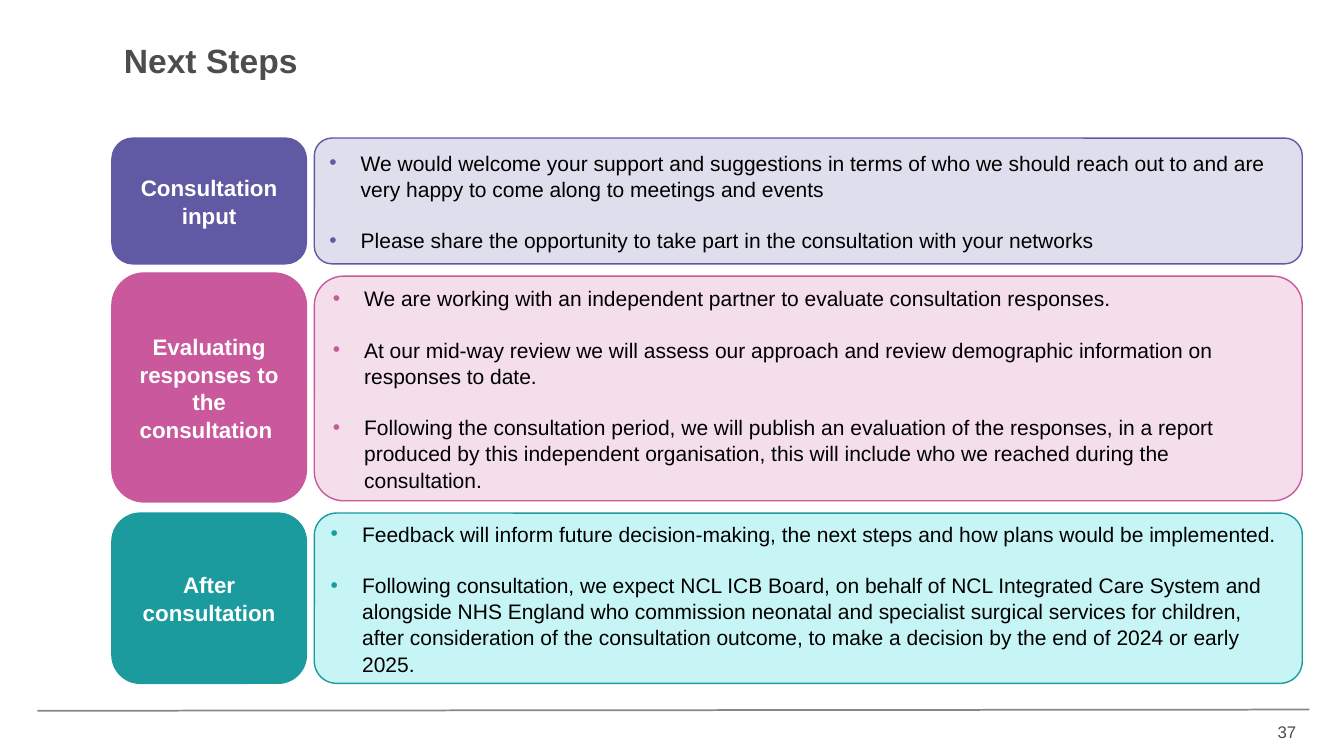
import pptx
import pptx.dml.color
import pptx.enum.shapes
import pptx.enum.text
import pptx.oxml.ns
import pptx.util
from lxml import etree

Cm = pptx.util.Cm
Pt = pptx.util.Pt
RGBColor = pptx.dml.color.RGBColor
PP_ALIGN = pptx.enum.text.PP_ALIGN
MSO_ANCHOR = pptx.enum.text.MSO_ANCHOR
qn = pptx.oxml.ns.qn

FONT = "Arial"
WHITE = RGBColor(0xFF, 0xFF, 0xFF)
BLACK = RGBColor(0, 0, 0)
DARK_GREY = RGBColor(0x4D, 0x4D, 0x4C)
RULE_GREY = RGBColor(0x87, 0x87, 0x87)
PURPLE = RGBColor(0x60, 0x59, 0xA3)
PALE_PURPLE = RGBColor(0xDF, 0xDE, 0xED)
PINK = RGBColor(0xCA, 0x58, 0x9C)
PALE_PINK = RGBColor(0xF4, 0xDE, 0xEB)
TEAL = RGBColor(0x1B, 0x9B, 0x9D)
PALE_TEAL = RGBColor(0xC7, 0xF5, 0xF5)

LABEL_LEFT, LABEL_WIDTH = 2.82, 4.9
PANEL_LEFT, PANEL_WIDTH = 7.92, 24.89

STEPS = [
    {
        "label": "Consultation input",
        "label_span": (3.48, 3.17),
        "panel_span": (3.48, 3.17),
        "corner": 0.14,
        "colours": (PURPLE, PALE_PURPLE),
        "points": [
            "We would welcome your support and suggestions in terms of who we should reach out to and are very happy to come along to meetings and events",
            "Please share the opportunity to take part in the consultation with your networks",
        ],
    },
    {
        "label": "Evaluating responses to the consultation ",
        "label_span": (6.88, 5.77),
        "panel_span": (6.96, 5.66),
        "corner": 0.13,
        "colours": (PINK, PALE_PINK),
        "points": [
            "We are working with an independent partner to evaluate consultation responses.",
            "At our mid-way review we will assess our approach and review demographic information on responses to date.",
            "Following the consultation period, we will publish an evaluation of the responses, in a report produced by this independent organisation, this will include who we reached during the consultation.",
        ],
    },
    {
        "label": "After consultation",
        "label_span": (12.93, 4.29),
        "panel_span": (12.93, 4.29),
        "corner": 0.13,
        "colours": (TEAL, PALE_TEAL),
        "points": [
            "Feedback will inform future decision-making, the next steps and how plans would be implemented.",
            "Following consultation, we expect NCL ICB Board, on behalf of NCL Integrated Care System and alongside NHS England who commission neonatal and specialist surgical services for children, after consideration of the consultation outcome, to make a decision by the end of 2024 or early 2025.",
        ],
    },
]


def style_font(paragraph, size, colour, bold=False):
    font = paragraph.font
    font.name = FONT
    font.size = Pt(size)
    font.bold = bold
    font.color.rgb = colour


def add_bullet(paragraph, colour):
    properties = paragraph._p.get_or_add_pPr()
    properties.set("marL", str(Cm(0.79)))
    properties.set("indent", str(-Cm(0.79)))
    bullet_colour = etree.SubElement(properties, qn("a:buClr"))
    etree.SubElement(bullet_colour, qn("a:srgbClr"), val=str(colour))
    etree.SubElement(properties, qn("a:buFont"), typeface=FONT)
    etree.SubElement(properties, qn("a:buChar"), char="•")


def add_rounded_box(slide, left, top, width, height, fill, outline):
    shape = slide.shapes.add_shape(
        pptx.enum.shapes.MSO_SHAPE.ROUNDED_RECTANGLE,
        Cm(left), Cm(top), Cm(width), Cm(height),
    )
    shape.shadow.inherit = False
    shape.fill.solid()
    shape.fill.fore_color.rgb = fill
    shape.line.color.rgb = outline
    shape.line.width = Pt(1)
    shape.text_frame.word_wrap = True
    shape.text_frame.vertical_anchor = MSO_ANCHOR.MIDDLE
    return shape


def add_label(slide, left, top, width, height, text, colour):
    shape = add_rounded_box(slide, left, top, width, height, colour, colour)
    paragraph = shape.text_frame.paragraphs[0]
    paragraph.text = text
    paragraph.alignment = PP_ALIGN.CENTER
    paragraph.line_spacing = 1.04
    style_font(paragraph, 16, WHITE, bold=True)


def add_panel(slide, left, top, width, height, points, corner, colours):
    accent, tint = colours
    shape = add_rounded_box(slide, left, top, width, height, tint, accent)
    shape.adjustments[0] = corner
    frame = shape.text_frame
    for index, point in enumerate(points):
        paragraph = frame.add_paragraph() if index else frame.paragraphs[0]
        paragraph.text = point
        paragraph.alignment = PP_ALIGN.LEFT
        paragraph.line_spacing = 1.04
        if index:
            paragraph.space_before = Pt(18)
        add_bullet(paragraph, accent)
        style_font(paragraph, 15, BLACK)


def add_step(slide, step):
    add_label(slide, LABEL_LEFT, step["label_span"][0], LABEL_WIDTH, step["label_span"][1],
              step["label"], step["colours"][0])
    add_panel(slide, PANEL_LEFT, step["panel_span"][0], PANEL_WIDTH, step["panel_span"][1],
              step["points"], step["corner"], step["colours"])


def set_title(slide, left, top, width, height, text):
    title = slide.shapes.title
    title.left, title.top, title.width, title.height = Cm(left), Cm(top), Cm(width), Cm(height)
    frame = title.text_frame
    frame.margin_left = frame.margin_top = frame.margin_right = frame.margin_bottom = 0
    frame.vertical_anchor = MSO_ANCHOR.TOP
    paragraph = frame.paragraphs[0]
    paragraph.text = text
    paragraph.alignment = PP_ALIGN.LEFT
    paragraph.line_spacing = 0.9
    style_font(paragraph, 24, DARK_GREY, bold=True)


def add_footer(slide, left, top, width, number):
    right = left + width
    rule = slide.shapes.add_connector(
        pptx.enum.shapes.MSO_CONNECTOR.STRAIGHT,
        Cm(left), Cm(top + 0.03), Cm(right), Cm(top),
    )
    rule.line.color.rgb = RULE_GREY
    rule.line.width = Pt(1.25)
    etree.SubElement(rule._element.spPr, qn("a:effectLst"))
    box = slide.shapes.add_textbox(Cm(right - 2.26), Cm(top + 0.18), Cm(2.18), Cm(0.76))
    box.text_frame.word_wrap = True
    paragraph = box.text_frame.paragraphs[0]
    paragraph.text = number
    paragraph.alignment = PP_ALIGN.RIGHT
    style_font(paragraph, 12, DARK_GREY)


def main():
    presentation = pptx.Presentation()
    presentation.slide_width = Cm(33.86)
    presentation.slide_height = Cm(19.05)
    slide = presentation.slides.add_slide(presentation.slide_layouts.get_by_name("Title Only"))
    set_title(slide, 3.12, 1.12, 22.02, 1.8, "Next Steps")
    for step in STEPS:
        add_step(slide, step)
    add_footer(slide, 0.94, 17.88, 32.05, "37")
    presentation.save("out.pptx")


if __name__ == "__main__":
    main()
